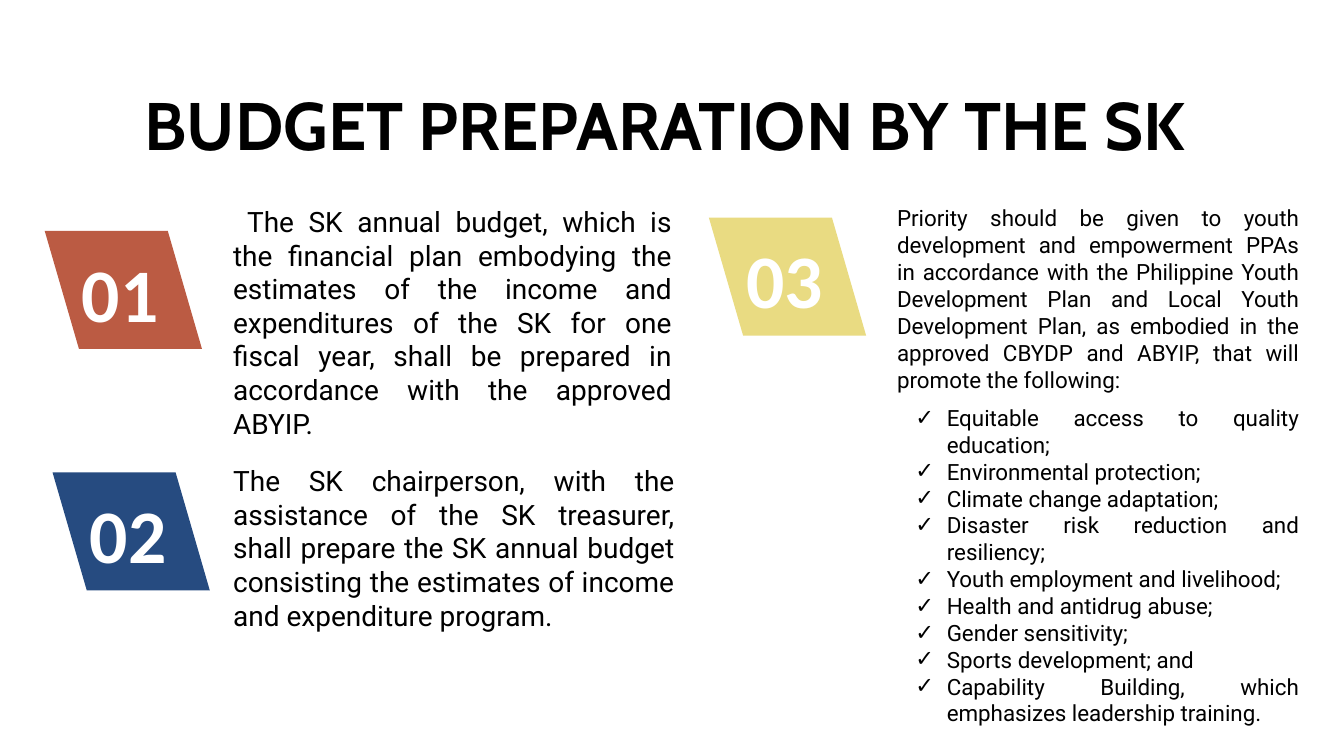
from pptx import Presentation
from pptx.dml.color import RGBColor
from pptx.enum import shapes, text
from pptx.oxml import xmlchemy
from pptx.util import Pt


def paint(target, color):
    if hasattr(target, "solid"):
        target.solid()
        target.fore_color.rgb = RGBColor.from_string(color)
    else:
        target.color.rgb = RGBColor.from_string(color)


def style(paragraph, name, size, color, alignment, bold=False):
    paragraph.alignment = alignment
    paragraph.space_before = Pt(0)
    paragraph.font.name = name
    paragraph.font.size = Pt(size)
    paragraph.font.bold = bold
    paint(paragraph.font, color)


presentation = Presentation()
presentation.slide_width = Pt(960)
presentation.slide_height = Pt(540)
slide = presentation.slides.add_slide(presentation.slide_layouts[1])

title, body = slide.placeholders
title.left, title.top, title.width, title.height = Pt(7), Pt(39.6), Pt(936), Pt(98)
title.text_frame.text = "BUDGET PREPARATION BY THE SK"
title.text_frame.auto_size = text.MSO_AUTO_SIZE.NONE
title.text_frame.vertical_anchor = text.MSO_ANCHOR.MIDDLE
style(title.text_frame.paragraphs[0], "Cabin", 48, "000000", text.PP_ALIGN.CENTER, True)

badges = [
    ("01", 32, 165, "BB5B43"),
    ("02", 37.6, 337.5, "264B80"),
    ("03", 506.4, 155.5, "E9DB82"),
]
for number, left, top, color in badges:
    shape = slide.shapes.add_shape(
        shapes.MSO_SHAPE.PARALLELOGRAM, Pt(left), Pt(top), Pt(112.3), Pt(84.2)
    )
    shape.adjustments[0] = 0.29
    shape.element.spPr.xfrm.set("flipH", "1")
    shape.shadow.inherit = False
    paint(shape.fill, color)
    shape.line.fill.background()
    frame = shape.text_frame
    frame.text = number
    frame.word_wrap = True
    frame.vertical_anchor = text.MSO_ANCHOR.BOTTOM
    frame.margin_top = Pt(61.2)
    style(frame.paragraphs[0], "Calibri", 54, "FFFFFF", text.PP_ALIGN.LEFT, True)

duties = [
    (
        "The SK annual budget, which is the financial plan embodying the estimates of the "
        "income and expenditures of the SK for one fiscal year, shall be prepared in "
        "accordance with the approved ABYIP.",
        142.5, 313.5, 128, 10,
    ),
    (
        "The SK chairperson, with the assistance of the SK treasurer, shall prepare the SK "
        "annual budget consisting the estimates of income and expenditure program.",
        327.6, 315.4, 104.4, 0,
    ),
]
for duty, top, width, height, indent in duties:
    box = slide.shapes.add_textbox(Pt(166.5), Pt(top), Pt(width), Pt(height))
    frame = box.text_frame
    frame.text = duty
    frame.word_wrap = True
    frame.margin_left = frame.margin_right = 0
    paragraph = frame.paragraphs[0]
    paragraph._p.get_or_add_pPr().set("indent", str(Pt(indent)))
    style(paragraph, "Roboto", 20, "000000", text.PP_ALIGN.JUSTIFY)

priorities = [
    "Equitable access to quality education;",
    "Environmental protection;",
    "Climate change adaptation;",
    "Disaster risk reduction and resiliency;",
    "Youth employment and livelihood;",
    "Health and antidrug abuse;",
    "Gender sensitivity;",
    "Sports development; and",
    "Capability Building, which emphasizes leadership training.",
]
introduction = (
    "Priority should be given to youth development and empowerment PPAs in accordance with "
    "the Philippine Youth Development Plan and Local Youth Development Plan, as embodied in "
    "the approved CBYDP and ABYIP, that will promote the following:"
)
body.left, body.top, body.width, body.height = Pt(640.8), Pt(142.5), Pt(287.2), Pt(337)
frame = body.text_frame
frame.text = "\n".join([introduction] + priorities)
frame.auto_size = text.MSO_AUTO_SIZE.NONE
frame.margin_left = frame.margin_right = 0
for index, paragraph in enumerate(frame.paragraphs):
    properties = paragraph._p.get_or_add_pPr()
    properties.set("marL", str(Pt(35.5 if index else 0)))
    properties.set("indent", str(Pt(-22.5 if index else 0)))
    bullet = xmlchemy.OxmlElement("a:buChar" if index else "a:buNone")
    if index:
        bullet.set("char", "✓")
    properties.append(bullet)
    style(paragraph, "Roboto", 16, "000000", text.PP_ALIGN.JUSTIFY)
frame.paragraphs[0].space_after = Pt(8.2)

presentation.save("out.pptx")
